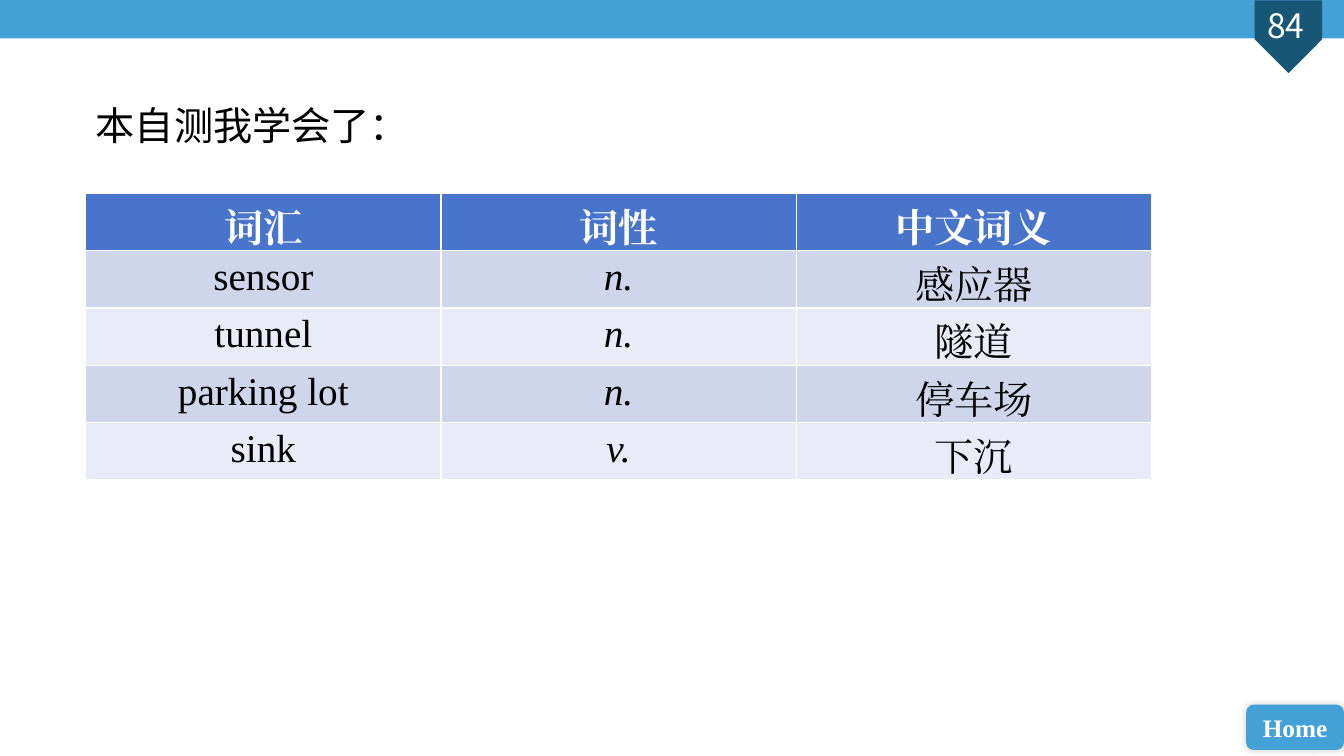
import pptx
import pptx.dml.color
import pptx.enum.shapes
import pptx.enum.text
import pptx.oxml
import pptx.oxml.ns
import pptx.util

WIDTH, HEIGHT = pptx.util.Inches(13.33), pptx.util.Inches(7.5)
SHAPES = pptx.enum.shapes.MSO_SHAPE
ANCHOR = pptx.enum.text.MSO_ANCHOR
ALIGN = pptx.enum.text.PP_ALIGN
SERIF = "Times New Roman"
SKY, WHITE, BLACK = "43A1D8", "FFFFFF", "000000"
VOCABULARY = [
    ("词汇", "词性", "中文词义"),
    ("sensor", "n.", "感应器"),
    ("tunnel", "n.", "隧道"),
    ("parking lot", "n.", "停车场"),
    ("sink", "v.", "下沉"),
]


def area(left, top, width, height):
    """Turn percentages of the slide into lengths."""
    shares = ((left, WIDTH), (top, HEIGHT), (width, WIDTH), (height, HEIGHT))
    return [round(share * side / 100) for share, side in shares]


def paint(fill, color):
    """Give a fill one solid colour."""
    fill.solid()
    fill.fore_color.rgb = pptx.dml.color.RGBColor.from_string(color)


def write(frame, text, size, font, color, align=ALIGN.CENTER, **formats):
    """Write one formatted line of text."""
    paragraph = frame.paragraphs[0]
    paragraph.alignment = align
    run = paragraph.add_run()
    run.text = text
    formats.update(size=pptx.util.Pt(size), name=font)
    for name, value in formats.items():
        setattr(run.font, name, value)
    paint(run.font.fill, color)
    east_asian = pptx.oxml.parse_xml(
        f'<a:ea {pptx.oxml.ns.nsdecls("a")} typeface="{font}"/>')
    run.font._element.find(pptx.oxml.ns.qn("a:latin")).addnext(east_asian)


def add_block(slide, kind, place, color):
    """Add a plain filled shape."""
    shape = slide.shapes.add_shape(kind, *area(*place))
    shape.shadow.inherit = False
    paint(shape.fill, color)
    shape.line.fill.background()
    return shape


def add_title(slide, text):
    """Move the title placeholder and fill it."""
    title = slide.shapes.title
    title.left, title.top, title.width, title.height = area(6.38, 12.67, 29.03, 7.6)
    title.text_frame.auto_size = pptx.enum.text.MSO_AUTO_SIZE.NONE
    title.text_frame.vertical_anchor = ANCHOR.MIDDLE
    write(title.text_frame, text, 28, "Calibri", BLACK, ALIGN.LEFT)


def add_page_marker(slide, number):
    """Add the pointed tab with the page number."""
    tab = add_block(slide, SHAPES.PENTAGON, (93.17, 0.4, 5.4, 8.93), "185675")
    tab.rotation = 90
    box = slide.shapes.add_textbox(*area(92, 0, 7.35, 6.67))
    box.text_frame.word_wrap = True
    write(box.text_frame, number, 24, "Noto Sans CJK SC", WHITE)


def add_home_button(slide):
    """Add the rounded button with a soft shadow."""
    button = add_block(slide, SHAPES.ROUNDED_RECTANGLE, (92.72, 93.2, 7.28, 6), SKY)
    button.text_frame.vertical_anchor = ANCHOR.MIDDLE
    write(button.text_frame, "Home", 18, SERIF, WHITE, bold=True)
    effects = button._element.spPr.find(pptx.oxml.ns.qn("a:effectLst"))
    effects.append(pptx.oxml.parse_xml(
        f'<a:outerShdw {pptx.oxml.ns.nsdecls("a")} blurRad="76200" dist="0" dir="18900000">'
        '<a:srgbClr val="000000"><a:alpha val="20000"/></a:srgbClr></a:outerShdw>'))


def add_vocabulary(slide, rows):
    """Add the word table with a header and banded rows."""
    place = area(6.38, 25.6, 79.3, 7.57 * len(rows))
    table = slide.shapes.add_table(len(rows), len(rows[0]), *place).table
    for row, words in enumerate(rows):
        header = row == 0
        band = "4874CB" if header else ("E9EBF6", "CFD6EC")[row % 2]
        for column, word in enumerate(words):
            cell = table.cell(row, column)
            paint(cell.fill, band)
            if not word.isascii():
                cell.margin_top = cell.margin_bottom = 0
                cell.vertical_anchor = ANCHOR.BOTTOM
            write(cell.text_frame, word, 28, SERIF, WHITE if header else BLACK,
                  bold=header, italic=column == 1 and not header)


def main():
    """Build the vocabulary slide."""
    presentation = pptx.Presentation()
    presentation.slide_width, presentation.slide_height = WIDTH, HEIGHT
    slide = presentation.slides.add_slide(presentation.slide_layouts[5])
    add_block(slide, SHAPES.RECTANGLE, (0, 0, 100, 5.07), SKY)
    add_page_marker(slide, "84")
    add_home_button(slide)
    add_vocabulary(slide, VOCABULARY)
    add_title(slide, "本自测我学会了：")
    presentation.save("out.pptx")


if __name__ == "__main__":
    main()
